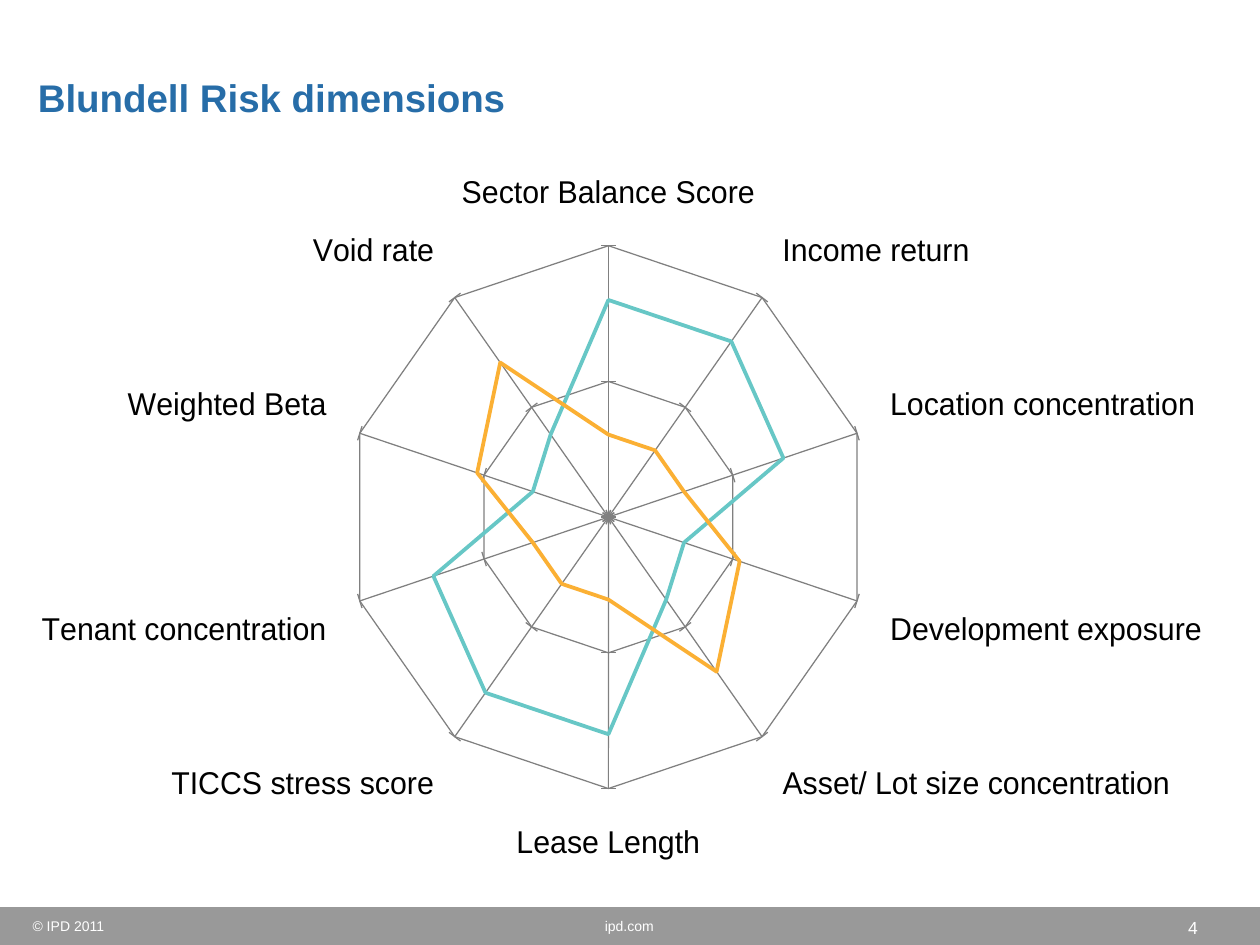
from lxml import etree
from pptx import Presentation
from pptx.chart.data import CategoryChartData
from pptx.dml.color import RGBColor
from pptx.enum import chart as ch, shapes, text
from pptx.oxml.ns import qn
from pptx.util import Pt

TITLE = "Blundell Risk dimensions"
FOOTER = [
    ("© IPD 2011", 11.5, 57, 17.3, 8, text.PP_ALIGN.LEFT),
    ("ipd.com", 338.4, 42.5, 17.3, 8, text.PP_ALIGN.CENTER),
    ("4", 671.8, 41.8, 19.4, 10, text.PP_ALIGN.LEFT),
]
SCORES = [
    ("Sector Balance Score", 100, 38),
    ("Income return", 100, 38),
    ("Location concentration", 88, 38),
    ("Development exposure", 38, 66),
    ("Asset/ Lot size concentration", 47, 88),
    ("Lease Length", 100, 38),
    ("TICCS stress score", 100, 38),
    ("Tenant concentration", 88, 38),
    ("Weighted Beta", 38, 66),
    ("Void rate", 47, 88),
]
SERIES = [("Series 1", "67C7C6"), ("Series 2", "FBB034")]
PLOT = {"x": 0.2, "y": 0.16, "w": 0.51, "h": 0.74}
PLOT = {"x": 0.202, "y": 0.163, "w": 0.511, "h": 0.739}
GRID = "808080"


def rgb(value):
    return RGBColor.from_string(value)


def style(font, size, color, bold=False):
    font.name = "Arial"
    font.size = Pt(size)
    font.bold = bold
    font.color.rgb = rgb(color)


def draw_line(line, color, width):
    line.color.rgb = rgb(color)
    line.width = Pt(width)


def add_footer(s):
    bar = s.shapes.add_shape(shapes.MSO_SHAPE.RECTANGLE, 0, Pt(518.4), Pt(720), Pt(21.6))
    bar.shadow.inherit = False
    bar.fill.solid()
    bar.fill.fore_color.rgb = rgb("999999")
    bar.line.fill.background()
    for words, left, width, height, size, align in FOOTER:
        tf = s.shapes.add_textbox(Pt(left), Pt(520.6), Pt(width), Pt(height)).text_frame
        tf.vertical_anchor = text.MSO_ANCHOR.MIDDLE
        tf.text = words
        p = tf.paragraphs[0]
        p.alignment = align
        style(p.runs[0].font, size, "FFFFFF")


def add_title(s):
    sp = s.shapes.title
    sp.left, sp.top, sp.width, sp.height = Pt(14.4), Pt(38.5), Pt(705.6), Pt(56.9)
    tf = sp.text_frame
    tf.text = TITLE
    tf.vertical_anchor = text.MSO_ANCHOR.TOP
    p = tf.paragraphs[0]
    p.alignment = text.PP_ALIGN.LEFT
    style(p.runs[0].font, 22, "276DA8", True)


def set_plot_layout(chart):
    area = chart._chartSpace.chart.plotArea
    for old in area.findall(qn("c:layout")):
        area.remove(old)
    layout = etree.Element(qn("c:layout"))
    manual = etree.SubElement(layout, qn("c:manualLayout"))
    settings = {"layoutTarget": "inner", "xMode": "edge", "yMode": "edge", **PLOT}
    for tag, value in settings.items():
        etree.SubElement(manual, qn(f"c:{tag}")).set("val", str(value))
    area.insert(0, layout)


def add_radar(s):
    data = CategoryChartData()
    data.categories = [row[0] for row in SCORES]
    for i, (name, _) in enumerate(SERIES, 1):
        data.add_series(name, [row[i] for row in SCORES])
    chart = s.shapes.add_chart(ch.XL_CHART_TYPE.RADAR, Pt(23.8), Pt(72), Pt(678.2), Pt(419.8), data).chart
    chart.has_legend = False
    chart.has_title = False
    style(chart.font, 18, "000000")
    for axis in (chart.category_axis, chart.value_axis):
        axis.has_major_gridlines = True
        axis.major_tick_mark = ch.XL_TICK_MARK.CROSS
        draw_line(axis.major_gridlines.format.line, GRID, 0.75)
        draw_line(axis.format.line, GRID, 0.75)
    axis = chart.value_axis
    axis.minimum_scale, axis.maximum_scale, axis.major_unit = 0, 125, 62.5
    axis.tick_label_position = ch.XL_TICK_LABEL_POSITION.NONE
    plot = chart.plots[0]
    plot.vary_by_categories = False
    for series, (_, color) in zip(plot.series, SERIES):
        series.smooth = False
        series.marker.style = ch.XL_MARKER_STYLE.NONE
        draw_line(series.format.line, color, 2.25)
    set_plot_layout(chart)


def main():
    prs = Presentation()
    prs.slide_width, prs.slide_height = Pt(720), Pt(540)
    s = prs.slides.add_slide(prs.slide_layouts[5])
    add_footer(s)
    add_title(s)
    add_radar(s)
    prs.save("out.pptx")


if __name__ == "__main__":
    main()
